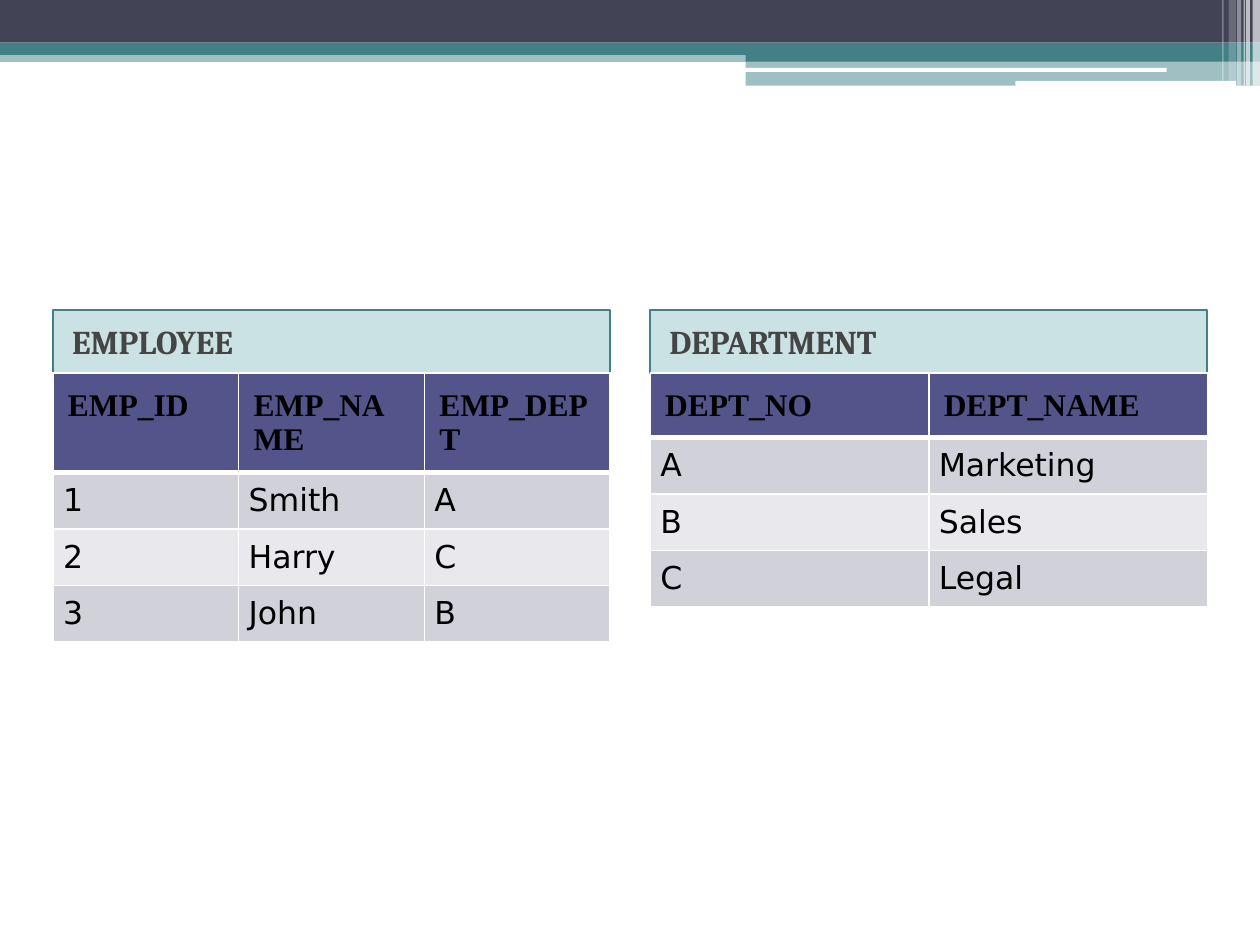
from lxml.etree import SubElement
from pptx import Presentation
from pptx.dml.color import RGBColor
from pptx.enum.shapes import MSO_SHAPE as Shape
from pptx.enum.text import MSO_ANCHOR as Anchor, MSO_AUTO_SIZE as AutoSize, PP_ALIGN as Align
from pptx.oxml.ns import qn
from pptx.util import Cm, Pt

WHITE = RGBColor(0xFF, 0xFF, 0xFF)
BLACK = RGBColor(0x00, 0x00, 0x00)
SLATE = RGBColor(0x42, 0x44, 0x56)
TEAL = RGBColor(0x43, 0x80, 0x86)
CAPTION_FILL = RGBColor(0x32, 0x8E, 0x97)
CAPTION_TEXT = RGBColor(0x45, 0x45, 0x45)
HEADER_FILL = RGBColor(0x53, 0x54, 0x8A)
BAND_FILLS = (RGBColor(0xD1, 0xD1, 0xDA), RGBColor(0xE9, 0xE9, 0xED))

# Content: caption placeholder index, caption, table rows
PANELS = [
    (1, "EMPLOYEE", [
        ("EMP_ID", "EMP_NAME", "EMP_DEPT"),
        ("1", "Smith", "A"),
        ("2", "Harry", "C"),
        ("3", "John", "B"),
    ]),
    (3, "DEPARTMENT", [
        ("DEPT_NO", "DEPT_NAME"),
        ("A", "Marketing"),
        ("B", "Sales"),
        ("C", "Legal"),
    ]),
]

# Banner bars: left, top, width, height in cm, colour, opacity %, preset
RECT, ROUND = Shape.RECTANGLE, Shape.ROUNDED_RECTANGLE
BARS = [
    (0, 1.02, 25.4, 0.23, TEAL, 50, RECT),
    (0, 0, 25.4, 0.86, SLATE, 100, RECT),
    (0, 0.86, 25.4, 0.25, TEAL, 100, RECT),
    (15.03, 0.99, 10.37, 0.25, TEAL, 100, RECT),
    (15.03, 1.23, 10.37, 0.5, TEAL, 50, RECT),
    (15.01, 1.37, 8.51, 0.08, WHITE, 100, ROUND),
    (20.47, 1.63, 4.45, 0.1, WHITE, 100, ROUND),
]
# Light stripes at the right end: left, width, height in cm, opacity %
STRIPES = [
    (25.25, 0.15, 1.73, 65),
    (25.12, 0.08, 1.73, 65),
    (25.07, 0.03, 1.73, 60),
    (24.94, 0.08, 1.73, 40),
    (24.77, 0.15, 1.63, 20),
    (24.64, 0.03, 1.63, 30),
]

# Panel grid in cm
MARGIN, PANEL_WIDTH, PANEL_STEP = 1.07, 11.23, 12.04
CAPTION_TOP, CAPTION_HEIGHT, ROW_HEIGHT = 6.25, 1.27, 1.04

CAPTION_FONT = {"name": "Cambria", "size": Pt(19), "bold": True}
HEADER_FONT = {"name": "Times New Roman", "size": Pt(18), "bold": True}
BODY_FONT = {"name": "DejaVu Sans", "size": Pt(18), "bold": False}


def apply(target, values):
    for name, value in values.items():
        setattr(target, name, value)


def fill_solid(shape, colour, opacity=100):
    shape.fill.solid()
    shape.fill.fore_color.rgb = colour
    if opacity < 100:
        colour_node = shape.fill._xPr.find(qn("a:solidFill"))[0]
        SubElement(colour_node, qn("a:alpha"), val=str(opacity * 1000))


def add_bar(slide, left, top, width, height, colour, opacity, preset):
    bar = slide.shapes.add_shape(preset, Cm(left), Cm(top), Cm(width), Cm(height))
    bar.shadow.inherit = False
    fill_solid(bar, colour, opacity)
    bar.line.fill.background()


def fill_caption(caption, text, left):
    apply(caption, {"left": Cm(left), "top": Cm(CAPTION_TOP),
                    "width": Cm(PANEL_WIDTH), "height": Cm(CAPTION_HEIGHT)})
    fill_solid(caption, CAPTION_FILL, 25)
    caption.line.color.rgb = TEAL
    caption.line.width = Pt(1)
    frame = caption.text_frame
    apply(frame, {"text": text, "auto_size": AutoSize.NONE, "vertical_anchor": Anchor.MIDDLE})
    paragraph = frame.paragraphs[0]
    apply(paragraph, {"space_before": Pt(3), "alignment": Align.LEFT})
    paragraph._p.get_or_add_pPr().set("marL", str(Cm(0.13)))
    font = paragraph.runs[0].font
    apply(font, CAPTION_FONT)
    font.color.rgb = CAPTION_TEXT


def set_borders(cell, widths):
    properties = cell._tc.get_or_add_tcPr()
    for position, (side, width) in enumerate(widths.items()):
        line = SubElement(properties, qn(f"a:{side}"), w=str(Pt(width)))
        properties.insert(position, line)
        SubElement(SubElement(line, qn("a:solidFill")), qn("a:srgbClr"), val=str(WHITE))


def add_data_table(slide, rows, left):
    count = len(rows[0])
    table = slide.shapes.add_table(
        len(rows), count, Cm(left), Cm(CAPTION_TOP + CAPTION_HEIGHT),
        Cm(PANEL_WIDTH), Cm(ROW_HEIGHT * len(rows))).table
    for r, row in enumerate(rows):
        header = r == 0
        inset = Cm(0.3 if header else 0.2)
        for c, text in enumerate(row):
            cell = table.cell(r, c)
            cell.text = text
            apply(cell, {f"margin_{side}": inset for side in ("left", "top", "right", "bottom")})
            fill_solid(cell, HEADER_FILL if header else BAND_FILLS[(r - 1) % 2])
            set_borders(cell, {"lnL": 1, "lnR": 1, "lnT": 3 if r == 1 else 1,
                               "lnB": 3 if header else 1})
            font = cell.text_frame.paragraphs[0].runs[0].font
            apply(font, HEADER_FONT if header else BODY_FONT)
            font.color.rgb = BLACK


def main():
    presentation = Presentation()
    apply(presentation, {"slide_width": Cm(25.4), "slide_height": Cm(19.05)})
    slide = presentation.slides.add_slide(presentation.slide_layouts[4])
    captions = {shape.placeholder_format.idx: shape for shape in slide.placeholders}

    # Banner
    for bar in BARS:
        add_bar(slide, *bar)
    for left, width, height, opacity in STRIPES:
        add_bar(slide, left, 0, width, height, WHITE, opacity, RECT)

    # Captions with their tables
    for number, (index, caption, rows) in enumerate(PANELS):
        left = MARGIN + number * PANEL_STEP
        fill_caption(captions.pop(index), caption, left)
        add_data_table(slide, rows, left)

    # Unused placeholders
    for placeholder in captions.values():
        placeholder._element.getparent().remove(placeholder._element)

    presentation.save("out.pptx")


if __name__ == "__main__":
    main()
